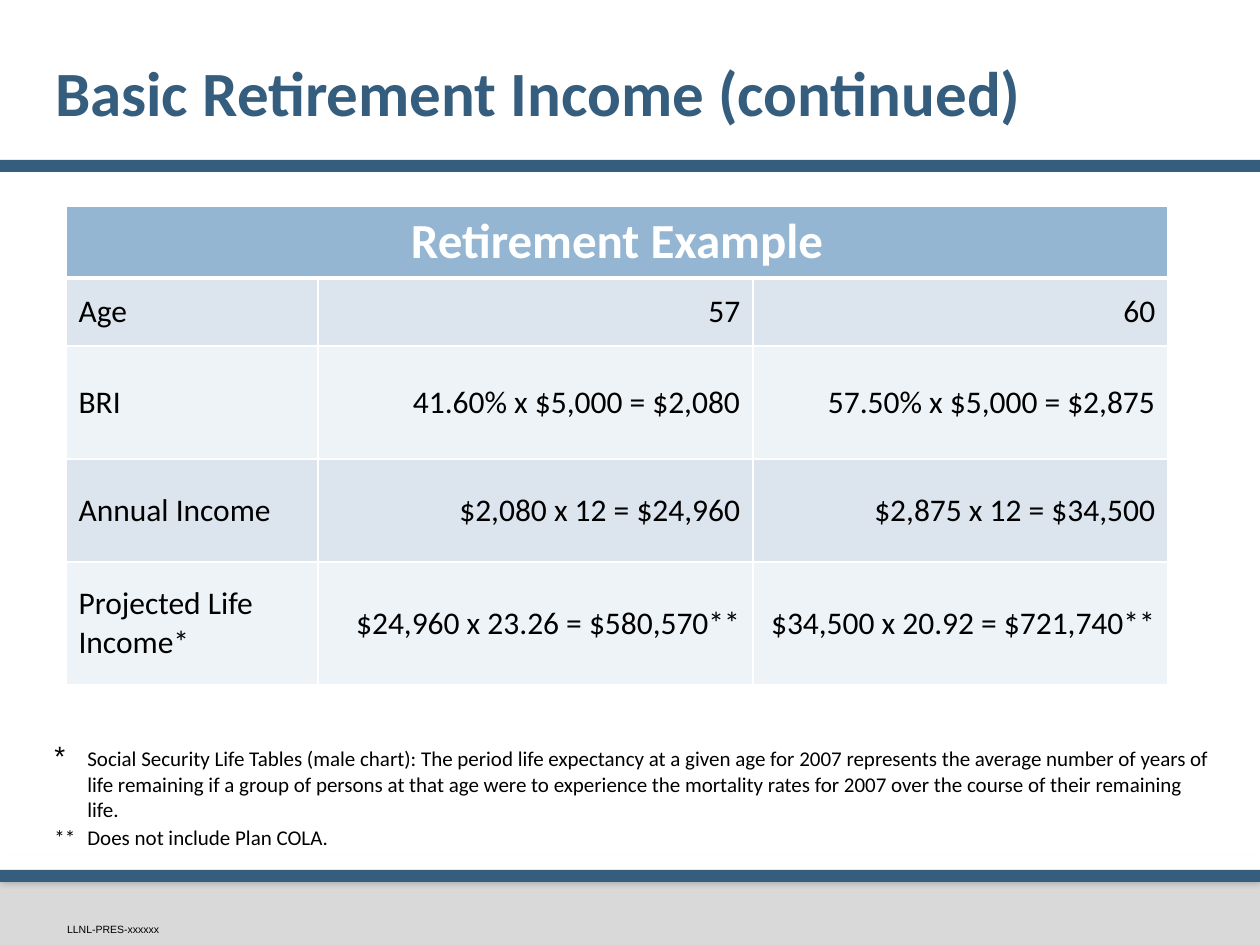
from dataclasses import dataclass

from lxml import etree
from pptx import Presentation
from pptx.dml.color import RGBColor
from pptx.enum.shapes import MSO_SHAPE
from pptx.enum.text import MSO_ANCHOR, MSO_AUTO_SIZE, PP_ALIGN
from pptx.oxml.ns import qn
from pptx.util import Emu, Pt

EMU_PER_PX = 914400 / 126
RECT = MSO_SHAPE.RECTANGLE
MIDDLE, BOTTOM = MSO_ANCHOR.MIDDLE, MSO_ANCHOR.BOTTOM
LEFT, CENTER, RIGHT = PP_ALIGN.LEFT, PP_ALIGN.CENTER, PP_ALIGN.RIGHT
NO_AUTOFIT = MSO_AUTO_SIZE.NONE

WHITE = RGBColor(0xFF, 0xFF, 0xFF)
BLACK = RGBColor(0x00, 0x00, 0x00)
GRAY = RGBColor(0xD9, 0xD9, 0xD9)
NAVY = RGBColor(0x35, 0x5D, 0x7E)
HEADER_BLUE = RGBColor(0x94, 0xB6, 0xD2)
BAND_DARK = RGBColor(0xDC, 0xE5, 0xEE)
BAND_LIGHT = RGBColor(0xEE, 0xF3, 0xF7)

COL_WIDTHS = (252, 435, 415)
ROW_HEIGHTS = (72, 68, 113, 103, 123)
ROWS = (
    ("Age", "57", "60"),
    ("BRI", "41.60% x $5,000 = $2,080", "57.50% x $5,000 = $2,875"),
    ("Annual Income", "$2,080 x 12 = $24,960", "$2,875 x 12 = $34,500"),
    ("Projected Life Income*", "$24,960 x 23.26 = $580,570**",
     "$34,500 x 20.92 = $721,740**"),
)
LIFE_TABLE_NOTE = (
    "Social Security Life Tables (male chart): The period life expectancy at a "
    "given age for 2007 represents the average number of years of life remaining "
    "if a group of persons at that age were to experience the mortality rates for "
    "2007 over the course of their remaining life."
)


@dataclass(frozen=True)
class Shadow:
    alpha: int
    blur: float
    dist: float


@dataclass(frozen=True)
class Bar:
    top: int
    height: int
    color: RGBColor
    shadow: Shadow | None = None


@dataclass(frozen=True)
class Style:
    size: int
    color: RGBColor = BLACK
    bold: bool = False
    font: str = "Calibri"


BARS = (
    Bar(876, 69, GRAY, Shadow(38, 3.1, 2)),
    Bar(856, 20, WHITE, Shadow(25, 4, 3)),
    Bar(870, 12, NAVY),
    Bar(160, 12, NAVY),
)
TITLE = Style(36, NAVY, True)
HEADER = Style(28, WHITE, True)
BODY = Style(18)
NOTE = Style(12)
NOTE_STAR = Style(16, font="Arial")
FOOTER = Style(6, font="Arial")


def px(n: int) -> Emu:
    return Emu(round(n * EMU_PER_PX))


def box(left: int, top: int, width: int, height: int) -> tuple:
    return px(left), px(top), px(width), px(height)


def add_run(p, text: str, style: Style) -> None:
    r = p.add_run()
    r.text = text
    r.font.name = style.font
    r.font.size = Pt(style.size)
    r.font.bold = style.bold
    r.font.color.rgb = style.color


def set_margins(tf, left: int, top: int, right: int, bottom: int) -> None:
    tf.margin_left, tf.margin_top = px(left), px(top)
    tf.margin_right, tf.margin_bottom = px(right), px(bottom)


def add_color(parent, color: RGBColor):
    return etree.SubElement(parent, qn("a:srgbClr"), val=str(color))


def add_bar(s, bar: Bar) -> None:
    sp = s.shapes.add_shape(RECT, *box(0, bar.top, 1260, bar.height))
    sp.shadow.inherit = False
    sp.fill.solid()
    sp.fill.fore_color.rgb = bar.color
    sp.line.fill.background()
    if bar.shadow:
        effects = sp._element.spPr.find(qn("a:effectLst"))
        outer = etree.SubElement(
            effects, qn("a:outerShdw"), blurRad=str(Pt(bar.shadow.blur)),
            dist=str(Pt(bar.shadow.dist)), dir="5400000", rotWithShape="0")
        etree.SubElement(add_color(outer, BLACK), qn("a:alpha"),
                         val=str(bar.shadow.alpha * 1000))


def add_title(s) -> None:
    sp = s.shapes.title
    sp.left, sp.top, sp.width, sp.height = box(42, 33, 1134, 126)
    tf = sp.text_frame
    tf.word_wrap = True
    tf.auto_size = NO_AUTOFIT
    tf.vertical_anchor = MIDDLE
    set_margins(tf, 13, 6, 6, 6)
    p = tf.paragraphs[0]
    p.alignment = LEFT
    p.line_spacing = Pt(38.2)
    add_run(p, "Basic Retirement Income (continued)", TITLE)


def set_cell(cell, text: str, style: Style, align, fill: RGBColor,
             top: int = 1, bottom: int = 1) -> None:
    tcPr = cell._tc.get_or_add_tcPr()
    for side, width in (("L", 1), ("R", 1), ("T", top), ("B", bottom)):
        ln = etree.SubElement(tcPr, qn(f"a:ln{side}"), w=str(Pt(width)))
        add_color(etree.SubElement(ln, qn("a:solidFill")), WHITE)
    cell.fill.solid()
    cell.fill.fore_color.rgb = fill
    cell.vertical_anchor = MIDDLE
    p = cell.text_frame.paragraphs[0]
    p.alignment = align
    if text:
        add_run(p, text, style)


def add_income_table(s) -> None:
    frame = s.shapes.add_table(
        len(ROW_HEIGHTS), len(COL_WIDTHS),
        *box(66, 206, sum(COL_WIDTHS), sum(ROW_HEIGHTS)))
    table = frame.table
    table.first_row = False
    table.horz_banding = False
    for col, width in zip(table.columns, COL_WIDTHS):
        col.width = px(width)
    for row, height in zip(table.rows, ROW_HEIGHTS):
        row.height = px(height)
    for c in range(len(COL_WIDTHS)):
        text = "" if c else "Retirement Example"
        set_cell(table.cell(0, c), text, HEADER, CENTER, HEADER_BLUE, bottom=3)
    table.cell(0, 0).merge(table.cell(0, len(COL_WIDTHS) - 1))
    for i, values in enumerate(ROWS, start=1):
        fill = BAND_DARK if i % 2 else BAND_LIGHT
        for c, text in enumerate(values):
            set_cell(table.cell(i, c), text, BODY, RIGHT if c else LEFT, fill,
                     top=3 if i == 1 else 1)


def add_footnotes(s) -> None:
    tf = s.shapes.add_textbox(*box(42, 732, 1187, 126)).text_frame
    tf.word_wrap = True
    first, second = tf.paragraphs[0], tf.add_paragraph()
    for p in (first, second):
        pPr = p._p.get_or_add_pPr()
        pPr.set("marL", str(px(33)))
        pPr.set("indent", str(-px(33)))
    add_run(first, "*\t", NOTE_STAR)
    add_run(first, LIFE_TABLE_NOTE, NOTE)
    second.line_spacing = 0.65
    second.space_before = Pt(6)
    add_run(second, "**\tDoes not include Plan COLA.", NOTE)


def add_document_number(s) -> None:
    tf = s.shapes.add_textbox(*box(67, 924, 121, 12)).text_frame
    tf.word_wrap = True
    tf.vertical_anchor = BOTTOM
    set_margins(tf, 0, 0, 0, 0)
    add_run(tf.paragraphs[0], "LLNL-PRES-xxxxxx", FOOTER)


def main() -> None:
    prs = Presentation()
    prs.slide_width, prs.slide_height = px(1260), px(945)
    s = prs.slides.add_slide(prs.slide_layouts[5])
    for bar in BARS:
        add_bar(s, bar)
    add_document_number(s)
    add_title(s)
    add_income_table(s)
    add_footnotes(s)
    prs.save("out.pptx")


if __name__ == "__main__":
    main()
